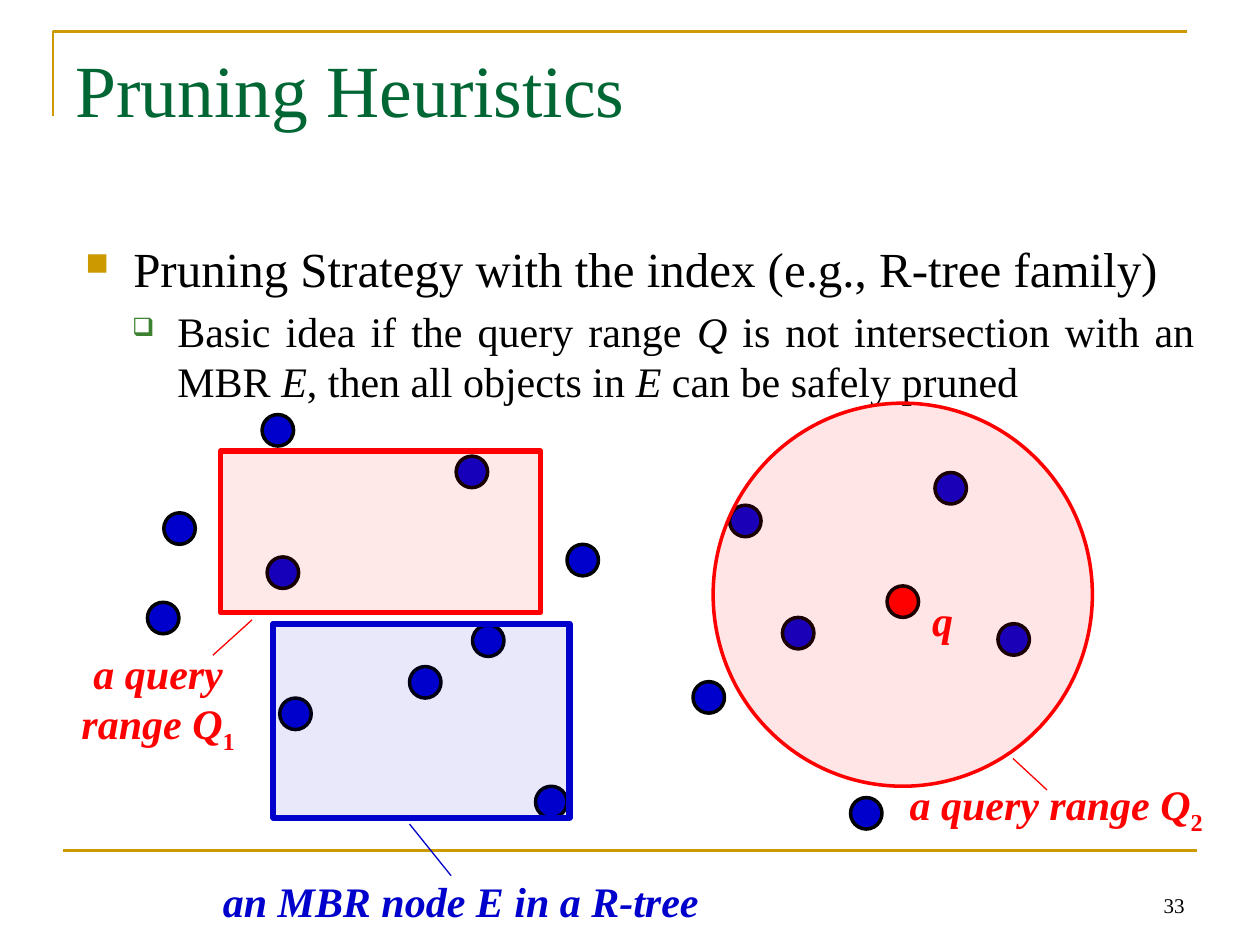
from lxml.etree import SubElement
from pptx import Presentation
from pptx.dml.color import RGBColor
from pptx.enum.shapes import MSO_CONNECTOR, MSO_SHAPE
from pptx.enum.text import MSO_ANCHOR, MSO_AUTO_SIZE, PP_ALIGN
from pptx.oxml.ns import qn
from pptx.util import Inches, Pt

GOLD = RGBColor(0xCC, 0x99, 0x00)
GREEN = RGBColor(0x00, 0x66, 0x33)
LEAF = RGBColor(0x3B, 0x81, 0x2F)
BLUE = RGBColor(0x00, 0x00, 0xCC)
RED = RGBColor(0xFF, 0x00, 0x00)
BLACK = RGBColor(0x00, 0x00, 0x00)

COLUMNS, ROWS = 100, 75
DOT = 2.5

# Upper left corners of the data objects, in columns and rows
OBJECTS = [
    (20.8, 32.9), (11.7, 47.8), (13, 40.7), (22.2, 55.4), (36.2, 36.2),
    (45, 43.2), (21.2, 44.2), (32.5, 52.9), (62.1, 49), (37.5, 49.6),
    (42.5, 62.4), (57.9, 40.1), (55, 54.1), (74.2, 37.5), (67.5, 63.3),
    (79.2, 49.5),
]


class SlideBuilder:
    """Draws on one slide; all places are (column, row) on a 100 x 75 grid."""

    font_name = "Times New Roman"

    def __init__(self, deck):
        self.column = deck.slide_width / COLUMNS
        self.row = deck.slide_height / ROWS
        self.slide = deck.slides.add_slide(deck.slide_layouts[5])
        self.shapes = self.slide.shapes

    def at(self, column, row):
        return round(column * self.column), round(row * self.row)

    def box(self, column, row, width, height):
        return *self.at(column, row), *self.at(width, height)

    def style_font(self, font, size, color, accent=False):
        font.name, font.size = self.font_name, Pt(size)
        font.color.rgb = color
        font.bold = font.italic = accent

    def title(self, text, *place):
        title = self.shapes.title
        title.left, title.top, title.width, title.height = self.box(*place)
        title.text_frame.text = text
        title.text_frame.vertical_anchor = MSO_ANCHOR.TOP
        heading = title.text_frame.paragraphs[0]
        heading.alignment = PP_ALIGN.LEFT
        self.style_font(heading.font, 42, GREEN)

    def text_frame(self, *place, wrap=True):
        frame = self.shapes.add_textbox(*self.box(*place)).text_frame
        frame.word_wrap = wrap
        return frame

    def bullet(self, paragraph, pieces, size, level, indents, mark):
        """Fill a paragraph; every second piece is italic."""
        margin, hanging = indents
        char, color, percent = mark
        paragraph.level = level
        paragraph.alignment = PP_ALIGN.JUSTIFY
        paragraph.space_before = Pt(size * 0.2)
        self.style_font(paragraph.font, size, BLACK)
        for index, piece in enumerate(pieces):
            run = paragraph.add_run()
            run.text = piece
            if index % 2:
                run.font.italic = True
        props = paragraph._p.get_or_add_pPr()
        props.set("marL", str(Inches(margin)))
        props.set("indent", str(-Inches(hanging)))
        # Bullet settings come before the default run properties
        defaults = props.find(qn("a:defRPr"))
        bullet_color = SubElement(props, qn("a:buClr"))
        SubElement(bullet_color, qn("a:srgbClr"), val=str(color))
        SubElement(props, qn("a:buSzPct"), val=str(percent * 1000))
        SubElement(props, qn("a:buChar"), char=char)
        props.append(defaults)

    def label(self, text, color, *place, subscript="", wrap=False, align=PP_ALIGN.LEFT):
        frame = self.text_frame(*place, wrap=wrap)
        frame.auto_size = MSO_AUTO_SIZE.SHAPE_TO_FIT_TEXT
        caption = frame.paragraphs[0]
        caption.alignment = align
        self.style_font(caption.font, 24, color, accent=True)
        caption.add_run().text = text
        if subscript:
            index = caption.add_run()
            index.text = subscript
            index.font.italic = False
            index._r.get_or_add_rPr().set("baseline", "-25000")

    def page_number(self, number, *place):
        frame = self.text_frame(*place)
        frame.vertical_anchor = MSO_ANCHOR.BOTTOM
        frame.text = str(number)
        frame.paragraphs[0].alignment = PP_ALIGN.RIGHT
        self.style_font(frame.paragraphs[0].font, 12, BLACK)

    def region(self, kind, place, fill, line, weight, opacity=100):
        shape = self.shapes.add_shape(kind, *self.box(*place))
        shape.shadow.inherit = False
        shape.fill.solid()
        shape.fill.fore_color.rgb = fill
        if opacity < 100:
            fill_color = shape._element.spPr.find(f"{qn('a:solidFill')}/{qn('a:srgbClr')}")
            SubElement(fill_color, qn("a:alpha"), val=str(opacity * 1000))
        shape.line.color.rgb = line
        shape.line.width = Pt(weight)

    def dot(self, column, row, color):
        self.region(MSO_SHAPE.OVAL, (column, row, DOT, DOT), color, BLACK, 2)

    def line(self, start, end, color, weight=0.75):
        connector = self.shapes.add_connector(
            MSO_CONNECTOR.STRAIGHT, *self.at(*start), *self.at(*end))
        connector.line.color.rgb = color
        connector.line.width = Pt(weight)
        SubElement(connector._element.spPr, qn("a:effectLst"))

    def corner(self, start, *points):
        outline = self.shapes.build_freeform(*self.at(*start))
        outline.add_line_segments([self.at(*point) for point in points], close=False)
        shape = outline.convert_to_shape()
        shape.shadow.inherit = False
        shape.fill.background()
        shape.line.color.rgb = GOLD
        shape.line.width = Pt(1.5)


def main():
    deck = Presentation()
    deck.slide_width, deck.slide_height = Inches(10), Inches(7.5)
    page = SlideBuilder(deck)

    page.corner((4.2, 9.2), (4.2, 2.5), (94.2, 2.5))
    page.line((5, 67.5), (95, 67.5), GOLD, 1.5)
    page.title("Pruning Heuristics", 5, 3, 90, 12.5)

    strategy = page.text_frame(5.8, 18.4, 90, 49.5)
    page.bullet(strategy.paragraphs[0],
                ["Pruning Strategy with the index (e.g., R-tree family)"],
                28, 0, (0.38, 0.38), ("■", GOLD, 65))
    page.bullet(strategy.add_paragraph(),
                ["Basic idea if the query range ", "Q",
                 " is not intersection with an MBR ", "E",
                 ", then all objects in ", "E", " can be safely pruned"],
                24, 1, (0.73, 0.36), ("❑", LEAF, 60))
    page.page_number(33, 71.7, 68.3, 23.3, 5)

    for column, row in OBJECTS:
        page.dot(column, row, BLUE)

    page.region(MSO_SHAPE.RECTANGLE, (17.5, 35.8, 25.4, 12.8), RED, RED, 3, opacity=9)
    page.dot(70.4, 46.5, RED)
    page.label("q", RED, 73, 46.7, 3.7, 5)
    page.region(MSO_SHAPE.OVAL, (56.6, 32, 30.1, 30.4), RED, RED, 2, opacity=10)

    page.label("an MBR node E in a R-tree", BLUE, 16.7, 69, 40.2, 5)
    page.line((32.5, 65.4), (35.8, 69.5), BLUE)
    page.label("a query range Q", RED, 5.1, 50.9, 14.9, 9.1,
               subscript="1", wrap=True, align=PP_ALIGN.CENTER)
    page.label("a query range Q", RED, 71.2, 61.3, 26.2, 5, subscript="2")
    page.line((16.9, 52), (20, 49.2), RED)
    page.line((80.4, 60.2), (83.1, 62.7), RED)
    page.region(MSO_SHAPE.RECTANGLE, (21.7, 49.5, 23.5, 15.4), BLUE, BLUE, 3.5, opacity=9)

    deck.save("out.pptx")


if __name__ == "__main__":
    main()
